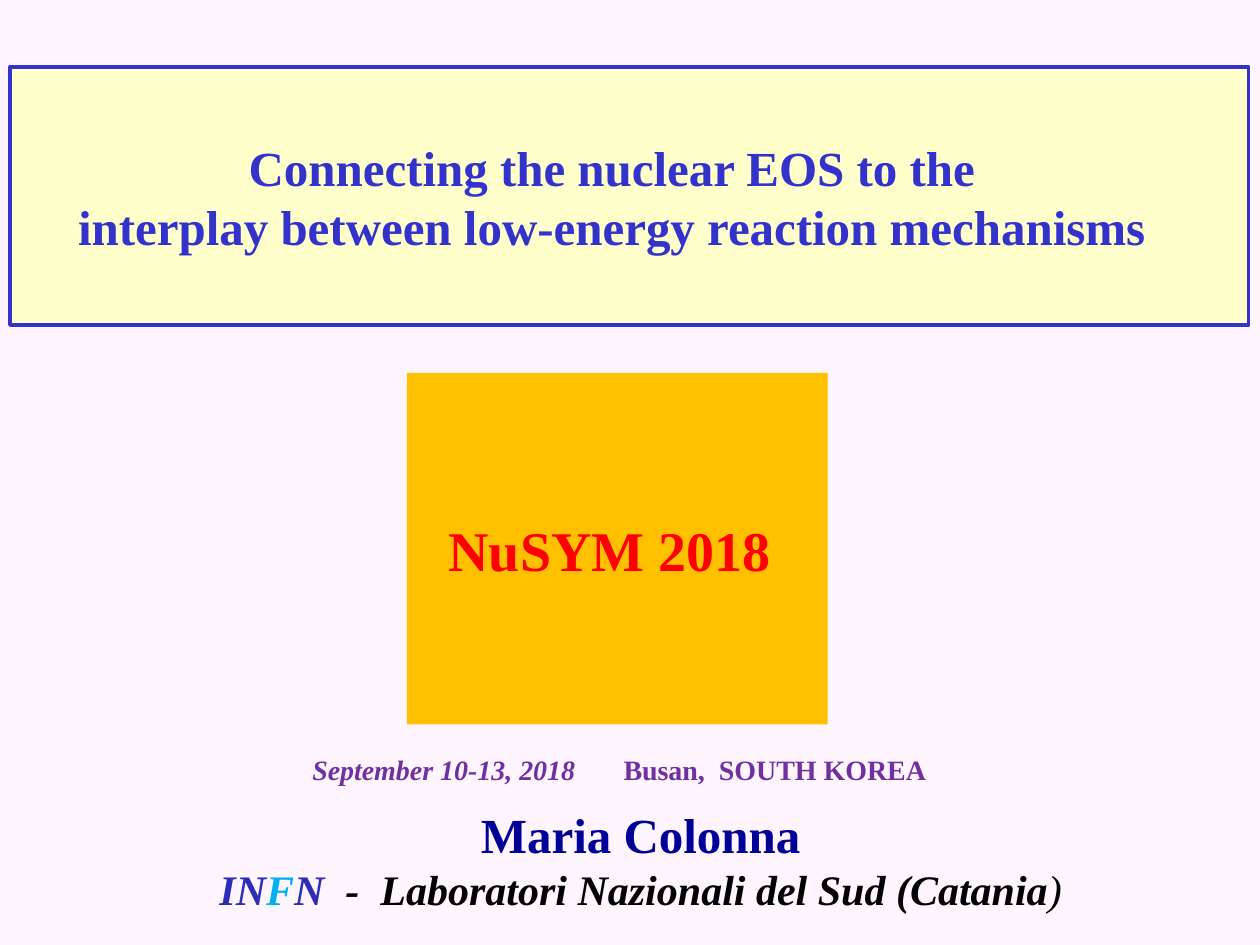
from lxml import etree
from pptx import Presentation
from pptx.dml.color import RGBColor
from pptx.enum.shapes import MSO_SHAPE
from pptx.enum.text import MSO_ANCHOR, PP_ALIGN
from pptx.oxml.ns import qn
from pptx.util import Inches, Pt

RECTANGLE = MSO_SHAPE.RECTANGLE
MIDDLE = MSO_ANCHOR.MIDDLE
CENTER, LEFT = PP_ALIGN.CENTER, PP_ALIGN.LEFT
FONT = "Times New Roman"
BACKGROUND, CREAM, GOLD = "FFF5FF", "FFFFCC", "FFC000"
BLUE, NAVY, RED, PURPLE = "3333CC", "000099", "FF0000", "7030A0"
INSTITUTE_BLUE, SKY, BLACK = "2D2DB9", "00B0F0", "000000"

FRAME_BOX = (0.08, 0.53, 9.83, 2.05)
TITLE_BOX = (0.5, 1.04, 8.96, 1.04)
AUTHOR_BOX = (1.66, 6.33, 6.95, 0.98)
MEETING_BOX = (3.23, 2.96, 3.34, 2.79)
DATE_BOX = (2.38, 5.92, 5.18, 0.37)
PLACE_TAB = 2.47

# Each run: text, size, colour, bold, italic
TITLE = [
    [("Connecting the nuclear EOS to the", 28, BLUE, True, False)],
    [("interplay between low-energy reaction mechanisms", 28, BLUE, True, False)],
]
MEETING = [[("NuSYM 2018", 32, RED, True, False)]]
DATE = [[
    ("September 10-13, 2018\t", 16, PURPLE, True, True),
    ("Busan,  SOUTH KOREA", 16, PURPLE, True, False),
]]
AUTHOR = [
    [("Maria Colonna", 28, NAVY, True, False)],
    [
        ("IN", 24, INSTITUTE_BLUE, True, True),
        ("F", 24, SKY, True, True),
        ("N", 24, INSTITUTE_BLUE, True, True),
        ("  -  Laboratori Nazionali del Sud (Catania", 24, BLACK, True, True),
        (")", 24, BLACK, False, True),
    ],
]


def color(value):
    return RGBColor.from_string(value)


def add_rectangle(shapes, box, fill, line=None):
    shape = shapes.add_shape(RECTANGLE, *map(Inches, box))
    shape.shadow.inherit = False
    shape.fill.solid()
    shape.fill.fore_color.rgb = color(fill)
    if line:
        shape.line.color.rgb = color(line)
        shape.line.width = Pt(2)
    else:
        shape.line.fill.background()
    return shape


def write(shape, paragraphs, left=0.1, right=0.1, alignment=CENTER):
    frame = shape.text_frame
    frame.word_wrap = True
    frame.vertical_anchor = MIDDLE
    frame.margin_left, frame.margin_right = Inches(left), Inches(right)
    for index, runs in enumerate(paragraphs):
        paragraph = frame.add_paragraph() if index else frame.paragraphs[0]
        paragraph.alignment = alignment
        for text, size, hue, bold, italic in runs:
            run = paragraph.add_run()
            run.text = text
            run.font.name = FONT
            run.font.size = Pt(size)
            run.font.bold, run.font.italic = bold, italic
            run.font.color.rgb = color(hue)


def add_tab_stop(paragraph, position):
    properties = paragraph._p.get_or_add_pPr()
    stops = etree.SubElement(properties, qn("a:tabLst"))
    etree.SubElement(stops, qn("a:tab"), pos=str(Inches(position)), algn="l")


def main():
    """Build the title slide of the talk."""
    presentation = Presentation()
    presentation.slide_width, presentation.slide_height = Inches(10), Inches(7.5)
    slide = presentation.slides.add_slide(presentation.slide_layouts[6])
    slide.background.fill.solid()
    slide.background.fill.fore_color.rgb = color(BACKGROUND)

    banner = slide.shapes.add_group_shape()
    add_rectangle(banner.shapes, FRAME_BOX, CREAM, BLUE)
    write(add_rectangle(banner.shapes, TITLE_BOX, CREAM), TITLE, 0.05, 0.3)

    author = slide.shapes.add_textbox(*map(Inches, AUTHOR_BOX))
    write(author, AUTHOR, 0.05, 0.15)
    write(add_rectangle(slide.shapes, MEETING_BOX, GOLD), MEETING, 0.1, 0.22)

    date = slide.shapes.add_textbox(*map(Inches, DATE_BOX))
    write(date, DATE, alignment=LEFT)
    add_tab_stop(date.text_frame.paragraphs[0], PLACE_TAB)

    presentation.save("out.pptx")


if __name__ == "__main__":
    main()
